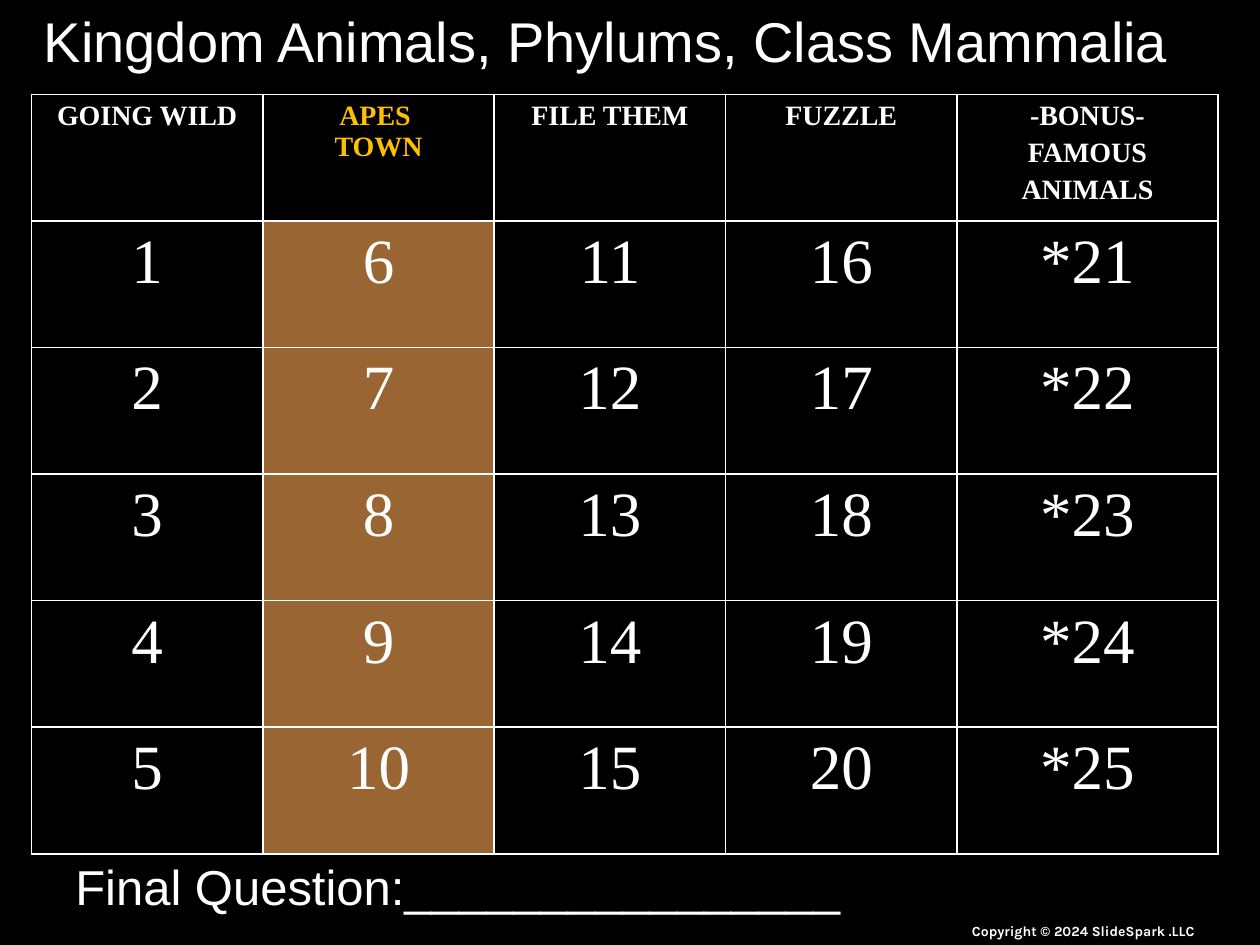
from dataclasses import dataclass

from lxml.etree import SubElement
from pptx import Presentation
from pptx.dml.color import RGBColor
from pptx.enum.text import MSO_ANCHOR, PP_ALIGN
from pptx.oxml.ns import qn
from pptx.util import Pt


@dataclass(frozen=True)
class Theme:
    background: str = "000000"
    text: str = "FFFFFF"
    accent: str = "FFC000"
    highlight: str = "996633"
    sans: str = "Arial"
    serif: str = "Times New Roman"
    small: str = "Karla"
    title_size: int = 32
    final_size: int = 28
    header_size: int = 16
    number_size: int = 36
    copyright_size: int = 8


THEME = Theme()
CATEGORIES = ["GOING WILD", "APES \vTOWN", "FILE THEM", "FUZZLE",
              "-BONUS-\nFAMOUS\nANIMALS"]
QUESTIONS_PER_CATEGORY = 5
HIGHLIGHT_COLUMN = 1
BONUS_COLUMN = 4


def write_text(tf, text, font, size, color=THEME.text, bold=False,
               align=PP_ALIGN.LEFT):
    """Fill a text frame, one paragraph for each line of text."""
    values = {"name": font, "size": Pt(size), "bold": bold}
    for i, line in enumerate(text.split("\n")):
        p = tf.add_paragraph() if i else tf.paragraphs[0]
        p.text = line
        p.alignment = align
        p.space_before = Pt(0.2 * size if i else 0)
        for r in p.runs:
            for name, value in values.items():
                setattr(r.font, name, value)
            r.font.color.rgb = RGBColor.from_string(color)


def add_label(s, box, text, font, size, **style):
    tf = s.shapes.add_textbox(*map(Pt, box)).text_frame
    tf.word_wrap = True
    tf.vertical_anchor = MSO_ANCHOR.TOP
    write_text(tf, text, font, size, **style)


def add_borders(cell, color, width):
    tcPr = cell._tc.get_or_add_tcPr()
    for i, side in enumerate(("lnL", "lnR", "lnT", "lnB")):
        ln = tcPr.makeelement(qn(f"a:{side}"), {"w": str(Pt(width))})
        fill = SubElement(ln, qn("a:solidFill"))
        SubElement(fill, qn("a:srgbClr"), val=color)
        tcPr.insert(i, ln)


def add_board(s, box):
    """Game board: a row of categories above numbered questions."""
    left, top, width, height = box
    rows, cols = QUESTIONS_PER_CATEGORY + 1, len(CATEGORIES)
    table = s.shapes.add_table(rows, cols, *map(Pt, box)).table
    table.first_row = table.horz_banding = False
    bonus_width = 0.22 * width
    for col, column in enumerate(table.columns):
        column.width = Pt(bonus_width if col == BONUS_COLUMN
                          else (width - bonus_width) / (cols - 1))
    for row in table.rows:
        row.height = Pt(height / rows)

    for row in range(rows):
        for col in range(cols):
            cell = table.cell(row, col)
            highlighted = col == HIGHLIGHT_COLUMN
            if row == 0:
                write_text(cell.text_frame, CATEGORIES[col], THEME.serif,
                           THEME.header_size, bold=True, align=PP_ALIGN.CENTER,
                           color=THEME.accent if highlighted else THEME.text)
            else:
                mark = "*" if col == BONUS_COLUMN else ""
                number = col * QUESTIONS_PER_CATEGORY + row
                write_text(cell.text_frame, f"{mark}{number}", THEME.serif,
                           THEME.number_size, align=PP_ALIGN.CENTER)
            if row and highlighted:
                cell.fill.solid()
                cell.fill.fore_color.rgb = RGBColor.from_string(THEME.highlight)
            else:
                cell.fill.background()
            add_borders(cell, THEME.text, 1)


def main():
    prs = Presentation()
    prs.slide_width, prs.slide_height = Pt(720), Pt(540)
    s = prs.slides.add_slide(prs.slide_layouts[6])
    s.background.fill.solid()
    s.background.fill.fore_color.rgb = RGBColor.from_string(THEME.background)

    add_board(s, (18, 54, 678, 434))
    add_label(s, (444, 523.5, 690 - 444, 16.5),
              "Copyright © 2024 SlideSpark .LLC", THEME.small,
              THEME.copyright_size, bold=True, align=PP_ALIGN.RIGHT)
    add_label(s, (18, 0, 702, 45), "Kingdom Animals, Phylums, Class Mammalia",
              THEME.sans, THEME.title_size)
    add_label(s, (36, 486, 474, 41), "Final Question:" + "_" * 16,
              THEME.sans, THEME.final_size)
    prs.save("out.pptx")


if __name__ == "__main__":
    main()
